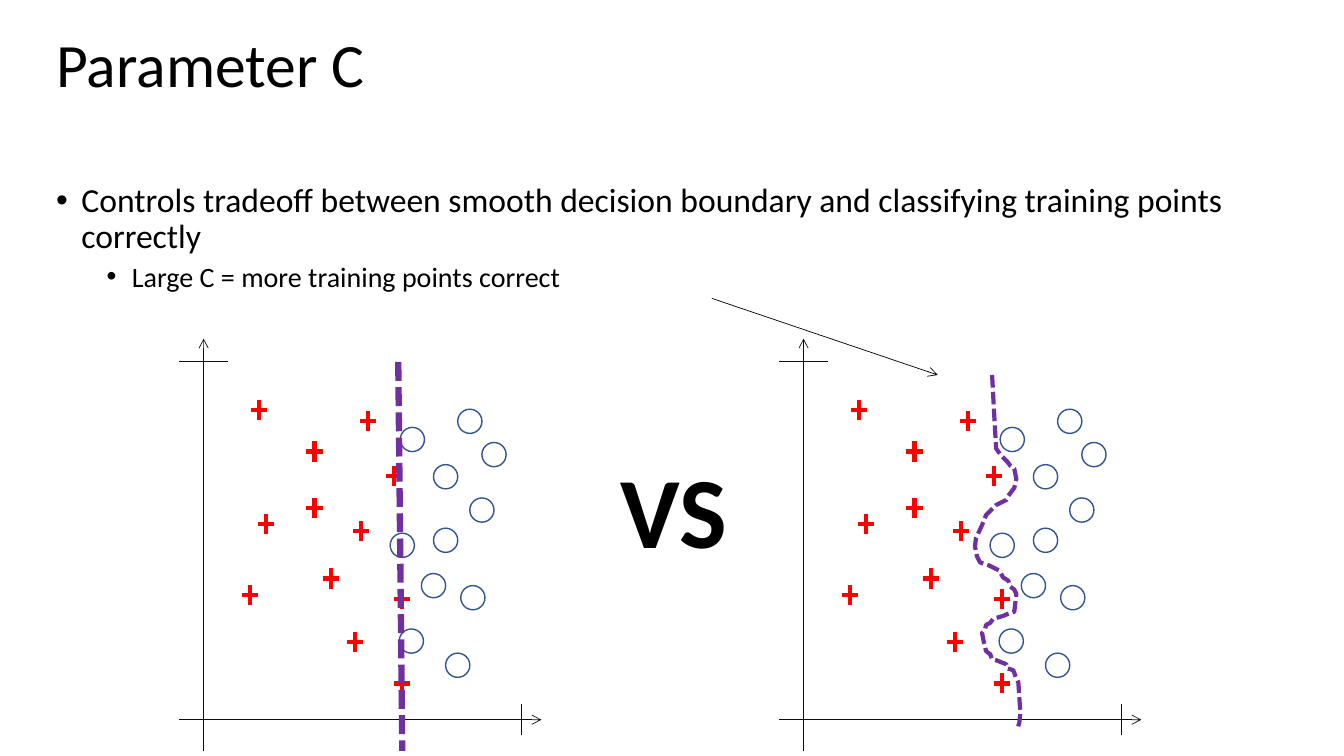
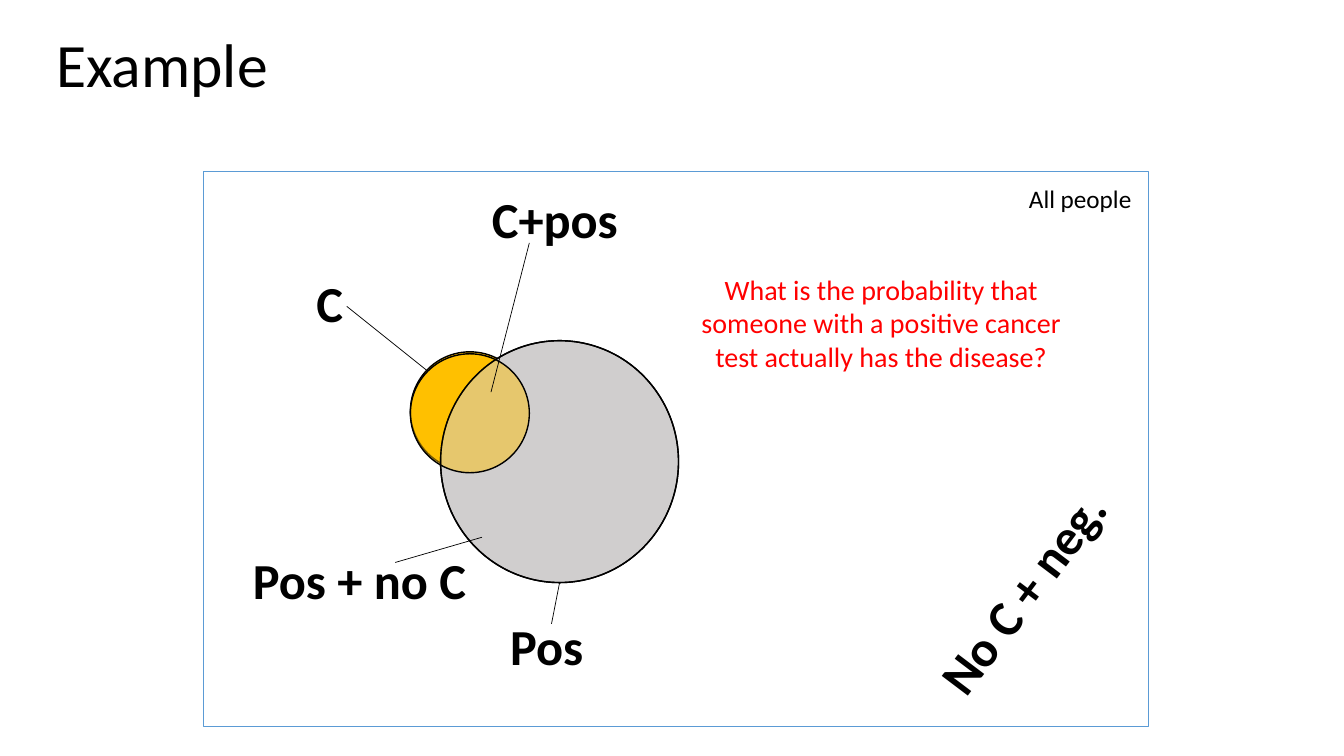
from lxml.etree import SubElement
from pptx import Presentation
from pptx.dml.color import RGBColor
from pptx.enum.dml import MSO_LINE
from pptx.enum.shapes import MSO_CONNECTOR, MSO_SHAPE
from pptx.enum.text import MSO_ANCHOR, PP_ALIGN
from pptx.oxml.ns import qn
from pptx.util import Pt

PX = 9144  # EMU per px, 100 px to the inch
FONT = "Calibri"
COLORS = {
    "text": "000000",
    "axis": "0D0D0D",
    "positive": "FF0000",
    "negative": "325491",
    "boundary": "7030A0",
    "disease": "FFC000",
    "tested": "D0CECE",
    "frame": "5B9BD5",
    "question": "FF0000",
}
COLORS = {name: RGBColor.from_string(value) for name, value in COLORS.items()}


def add_text(slide, box, words, size, color="text", bold=False,
             align=PP_ALIGN.LEFT, anchor=MSO_ANCHOR.TOP):
    """Add a text box with one paragraph per entry of words."""
    label = slide.shapes.add_textbox(*[v * PX for v in box])
    frame = label.text_frame
    frame.word_wrap = True
    frame.vertical_anchor = anchor
    for i, text in enumerate(words):
        paragraph = frame.paragraphs[0] if i == 0 else frame.add_paragraph()
        paragraph.alignment = align
        run = paragraph.add_run()
        run.text = text
        run.font.name = FONT
        run.font.size = Pt(size)
        run.font.bold = bold
        run.font.color.rgb = COLORS[color]
    return label


def add_line(slide, ends, color="text", width=0.5, arrow=False, dash=None):
    """Add a straight line from ends[:2] to ends[2:]."""
    line = slide.shapes.add_connector(
        MSO_CONNECTOR.STRAIGHT, *[v * PX for v in ends])
    line.line.color.rgb = COLORS[color]
    line.line.width = Pt(width)
    if dash:
        line.line.dash_style = dash
    if arrow:
        SubElement(line.line._get_or_add_ln(), qn("a:tailEnd"), type="arrow")
    SubElement(line._element.spPr, qn("a:effectLst"))


prs = Presentation()
prs.slide_width = 1333 * PX
prs.slide_height = 750 * PX

# Both slides with their titles
slides = []
for title in ("Parameter C", "Example"):
    slide = prs.slides.add_slide(prs.slide_layouts[6])
    heading = add_text(slide, (46, 15, 1023, 104), [title], 44,
                       anchor=MSO_ANCHOR.MIDDLE)
    heading.text_frame.paragraphs[0].line_spacing = 0.9
    slides.append(slide)
parameter, example = slides

# Slide 1: bullets
body = add_text(parameter, (46, 177, 1233, 499), [
    "Controls tradeoff between smooth decision boundary and classifying "
    "training points correctly",
    "Large C = more training points correct",
], 24)
levels = [(25, 24, 0), (75, 20, 5)]  # left margin, text size, space before
for paragraph, (margin, size, before) in zip(body.text_frame.paragraphs, levels):
    paragraph.line_spacing = 0.9
    paragraph.space_before = Pt(before)
    paragraph.runs[0].font.size = Pt(size)
    props = paragraph._p.get_or_add_pPr()
    props.set("marL", str(margin * PX))
    props.set("indent", str(-25 * PX))
    SubElement(props, qn("a:buFont"), typeface="Arial")
    SubElement(props, qn("a:buChar"), char="•")

# Slide 1: the same scatter plot twice
PANEL_SHIFT = 595
CIRCLE = 24
axes = [  # ends, arrow
    ((178, 714, 537, 714), True),
    ((202, 745, 202, 336), True),
    ((517, 698, 517, 729), False),
    ((178, 359, 226, 359), False),
]
plus_centers = [
    (365, 418), (399, 678), (352, 637), (264, 520), (391, 472), (248, 590),
    (312, 448), (399, 594), (358, 527), (328, 574), (312, 504), (257, 407),
]
circle_corners = [
    (478, 439), (457, 581), (430, 524), (442, 648), (430, 461), (397, 424),
    (454, 406), (466, 494), (418, 569), (396, 624), (387, 529),
]
for shift in (0, PANEL_SHIFT):
    for (x1, y1, x2, y2), arrow in axes:
        add_line(parameter, (x1 + shift, y1, x2 + shift, y2), "axis", arrow=arrow)
    for x, y in plus_centers:
        x += shift
        add_line(parameter, (x, y - 10, x, y + 10), "positive", 3)
        add_line(parameter, (x - 8, y, x + 8, y), "positive", 3)
    for x, y in circle_corners:
        circle = parameter.shapes.add_shape(
            MSO_SHAPE.OVAL, (x + shift) * PX, y * PX, CIRCLE * PX, CIRCLE * PX)
        circle.shadow.inherit = False
        circle.fill.background()
        circle.line.color.rgb = COLORS["negative"]
        circle.line.width = Pt(1)

# Slide 1: smooth and winding decision boundaries
add_line(parameter, (395, 359, 399, 745), "boundary", 4.5,
         dash=MSO_LINE.SQUARE_DOT)
winding_points = [
    (984, 372), (986, 410), (987, 428), (988, 445), (993, 452), (999, 458),
    (1002, 462), (1006, 465), (1008, 475), (1006, 484), (1000, 492),
    (998, 496), (988, 501), (978, 511), (974, 521), (968, 534), (967, 542),
    (969, 552), (972, 558), (981, 561), (991, 566), (995, 573), (1000, 576),
    (1002, 582), (1006, 585), (1008, 589), (1007, 598), (1006, 607),
    (1002, 608), (995, 611), (985, 614), (982, 618), (978, 620), (977, 624),
    (974, 628), (976, 638), (978, 646), (982, 649), (984, 654), (988, 655),
    (998, 659), (999, 663), (1005, 665), (1008, 673), (1010, 677),
    (1011, 692), (1012, 707), (1011, 717), (1009, 723),
]
builder = parameter.shapes.build_freeform(*winding_points[0], scale=PX)
builder.add_line_segments(winding_points[1:], close=False)
winding = builder.convert_to_shape()
winding.shadow.inherit = False
winding.fill.background()
winding.line.color.rgb = COLORS["boundary"]
winding.line.width = Pt(3)
winding.line.dash_style = MSO_LINE.SQUARE_DOT

add_text(parameter, (564, 439, 209, 131), ["VS"], 72, bold=True,
         align=PP_ALIGN.CENTER)
add_line(parameter, (706, 296, 930, 372), arrow=True)

# Slide 2: frame and Venn circles, back to front
venn = [  # outline, box, fill, opacity in percent, line
    (MSO_SHAPE.OVAL, (407, 349, 118, 118), "disease", 100, "text"),
    (MSO_SHAPE.OVAL, (437, 338, 236, 240), "tested", 100, "text"),
    (MSO_SHAPE.RECTANGLE, (202, 170, 937, 551), None, 100, "frame"),
    (MSO_SHAPE.OVAL, (407, 351, 118, 118), "disease", 47, "text"),
    (MSO_SHAPE.OVAL, (437, 338, 236, 240), None, 100, "text"),
]
for outline, box, fill, opacity, line_color in venn:
    region = example.shapes.add_shape(outline, *[v * PX for v in box])
    region.shadow.inherit = False
    region.line.color.rgb = COLORS[line_color]
    region.line.width = Pt(1)
    if fill is None:
        region.fill.background()
        continue
    region.fill.solid()
    region.fill.fore_color.rgb = COLORS[fill]
    if opacity < 100:
        tint = region._element.spPr.find(qn("a:solidFill")).find(qn("a:srgbClr"))
        SubElement(tint, qn("a:alpha"), val=str(opacity * 1000))

# Slide 2: region labels and their leader lines
region_labels = [  # text, box, rotation
    ("C", (304, 265, 134, 71), 0),
    ("C+pos", (478, 182, 165, 71), 0),
    ("Pos + no C", (241, 540, 315, 71), 0),
    ("No C + neg.", (875, 528, 315, 71), 307.1),
    ("Pos", (496, 605, 315, 71), 0),
]
for words, box, rotation in region_labels:
    add_text(example, box, [words], 36, bold=True).rotation = rotation

leaders = [
    (344, 304, 424, 368),
    (487, 389, 525, 241),
    (478, 533, 392, 558),
    (547, 619, 555, 578),
]
for ends in leaders:
    add_line(example, ends)

# Slide 2: caption and question
add_text(example, (801, 177, 331, 40), ["All people"], 18, align=PP_ALIGN.RIGHT)
add_text(example, (671, 265, 406, 111), [
    "What is the probability that someone with a positive cancer test "
    "actually has the disease?",
], 20, "question", align=PP_ALIGN.CENTER)

prs.save("out.pptx")
